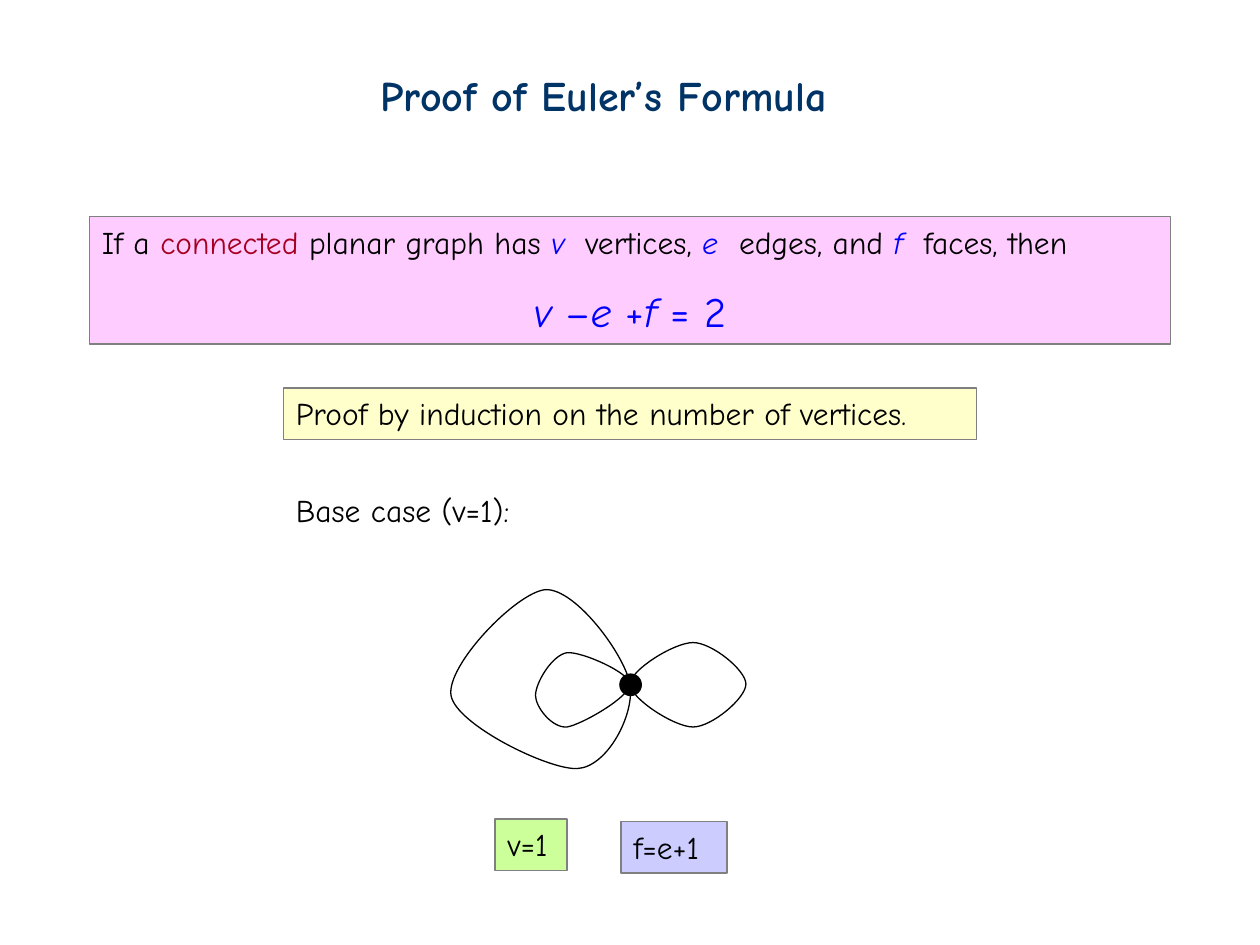
"""Build the slide that proves the base case of Euler's formula."""
from typing import NamedTuple, Optional

from lxml.etree import SubElement
from pptx import Presentation
from pptx.dml.color import RGBColor
from pptx.enum.shapes import MSO_SHAPE as Shape
from pptx.enum.text import MSO_ANCHOR as Anchor, MSO_AUTO_SIZE as AutoSize, PP_ALIGN as Align
from pptx.oxml.ns import qn
from pptx.util import Inches, Pt

FONT = "Comic Neue"
NAVY = RGBColor(0x00, 0x33, 0x66)
BLACK = RGBColor(0x00, 0x00, 0x00)
BLUE = RGBColor(0x00, 0x00, 0xFF)
RED = RGBColor(0xA5, 0x00, 0x21)
GRAY = RGBColor(0x80, 0x80, 0x80)
PINK = RGBColor(0xFF, 0xCC, 0xFF)
YELLOW = RGBColor(0xFF, 0xFF, 0xCC)
GREEN = RGBColor(0xCC, 0xFF, 0x99)
LILAC = RGBColor(0xCC, 0xCC, 0xFF)


class Span(NamedTuple):
    text: str
    color: RGBColor = BLACK
    italic: bool = False
    bold: bool = False


class Line(NamedTuple):
    spans: list[Span]
    size: int = 18
    align: Align = Align.LEFT
    spacing: float = 1.0


class Panel(NamedTuple):
    left: float
    top: float
    width: float
    height: float
    lines: list[Line]
    fill: Optional[RGBColor] = None


Point = tuple[float, float]
VERTEX: Point = (5, 5.43)

TITLE = Line([Span("Proof of Euler’s Formula", NAVY, bold=True)], 24)
THEOREM = [
    Line([
        Span("If a "), Span("connected", RED), Span(" planar graph has "),
        Span("v  ", BLUE, True), Span("vertices, "),
        Span("e  ", BLUE, True), Span("edges, and "),
        Span("f  ", BLUE, True), Span("faces, then"),
    ]),
    Line([
        Span("v ", BLUE, True), Span("–", BLUE), Span("e ", BLUE, True),
        Span("+", BLUE), Span("f", BLUE, True), Span(" = 2", BLUE),
    ], 24, Align.CENTER, 1.5),
]
PROOF_PANELS = [
    Panel(2.25, 3.08, 5.5, 0.41,
          [Line([Span("Proof by induction on the number of vertices.")])], YELLOW),
    Panel(2.25, 3.85, 2.03, 0.4, [Line([Span("Base case (v=1):")])]),
]
RESULT_PANELS = [
    Panel(3.93, 6.5, 0.57, 0.41, [Line([Span("v=1")])], GREEN),
    Panel(4.93, 6.52, 0.84, 0.41, [Line([Span("f=e+1")])], LILAC),
    Panel(0.71, 1.72, 8.58, 1.01, THEOREM, PINK),
]
LOOPS: list[list[Point]] = [
    [(5, 5.34), (4.62, 5.17), (4.5, 5.18), (4.38, 5.2), (4.25, 5.42), (4.25, 5.52),
     (4.25, 5.61), (4.38, 5.78), (4.5, 5.77), (4.62, 5.75), (5, 5.53), VERTEX],
    [(5, 5.54), (5.35, 5.77), (5.5, 5.77), (5.65, 5.77), (5.92, 5.54), (5.92, 5.43),
     (5.92, 5.32), (5.65, 5.1), (5.5, 5.1), (5.35, 5.1), (5, 5.32), VERTEX],
    [(5.04, 5.67), (4.82, 6.09), (4.58, 6.1), (4.35, 6.11), (3.62, 5.75), (3.58, 5.52),
     (3.54, 5.28), (4.1, 4.7), (4.33, 4.68), (4.57, 4.67), (4.96, 5.2), VERTEX],
]


def apply(target, values: dict) -> None:
    for name, value in values.items():
        setattr(target, name, value)


def write(frame, lines: list[Line]) -> None:
    apply(frame, {"word_wrap": True, "auto_size": AutoSize.SHAPE_TO_FIT_TEXT,
                  "vertical_anchor": Anchor.TOP})
    for index, line in enumerate(lines):
        para = frame.add_paragraph() if index else frame.paragraphs[0]
        apply(para, {"alignment": line.align, "line_spacing": line.spacing,
                     "space_before": Pt(0)})
        for span in line.spans:
            run = para.add_run()
            run.text = span.text
            apply(run.font, {"name": FONT, "size": Pt(line.size),
                             "bold": span.bold, "italic": span.italic})
            run.font.color.rgb = span.color


def outline(shape, color: RGBColor) -> None:
    shape.shadow.inherit = False
    shape.line.color.rgb = color
    shape.line.width = Pt(0.75)


def add_panel(page, panel: Panel) -> None:
    place = [Inches(length) for length in panel[:4]]
    if panel.fill is None:
        box = page.shapes.add_textbox(*place)
    else:
        box = page.shapes.add_shape(Shape.RECTANGLE, *place)
        box.fill.solid()
        box.fill.fore_color.rgb = panel.fill
        outline(box, GRAY)
    write(box.text_frame, panel.lines)


def add_vertex(page) -> None:
    dot = page.shapes.add_shape(Shape.OVAL, Inches(4.92), Inches(5.35),
                                Inches(0.17), Inches(0.17))
    dot.fill.solid()
    dot.fill.fore_color.rgb = BLACK
    outline(dot, BLACK)


def add_loop(page, points: list[Point]) -> None:
    """Draw a closed curve through the vertex from triples of Bezier points."""
    builder = page.shapes.build_freeform(*map(Inches, VERTEX))
    builder.add_line_segments([(Inches(x), Inches(y)) for x, y in points], close=True)
    loop = builder.convert_to_shape()
    trail = next(loop.element.iter(qn("a:path")))
    steps = trail.findall(qn("a:lnTo"))[:len(points)]
    close = trail.find(qn("a:close"))
    trail.remove(close)
    for start in range(0, len(steps), 3):
        curve = SubElement(trail, qn("a:cubicBezTo"))
        for step in steps[start:start + 3]:
            curve.append(step[0])
            trail.remove(step)
    trail.append(close)
    loop.fill.background()
    outline(loop, BLACK)


def main() -> None:
    deck = Presentation()
    apply(deck, {"slide_width": Inches(10), "slide_height": Inches(7.5)})
    page = deck.slides.add_slide(deck.slide_layouts[5])
    title = page.shapes.title
    apply(title, {"left": Inches(2.92), "top": Inches(0.5),
                  "width": Inches(4.14), "height": Inches(0.5)})
    write(title.text_frame, [TITLE])
    for panel in PROOF_PANELS:
        add_panel(page, panel)
    add_vertex(page)
    for points in LOOPS:
        add_loop(page, points)
    for panel in RESULT_PANELS:
        add_panel(page, panel)
    deck.save("out.pptx")


if __name__ == "__main__":
    main()
